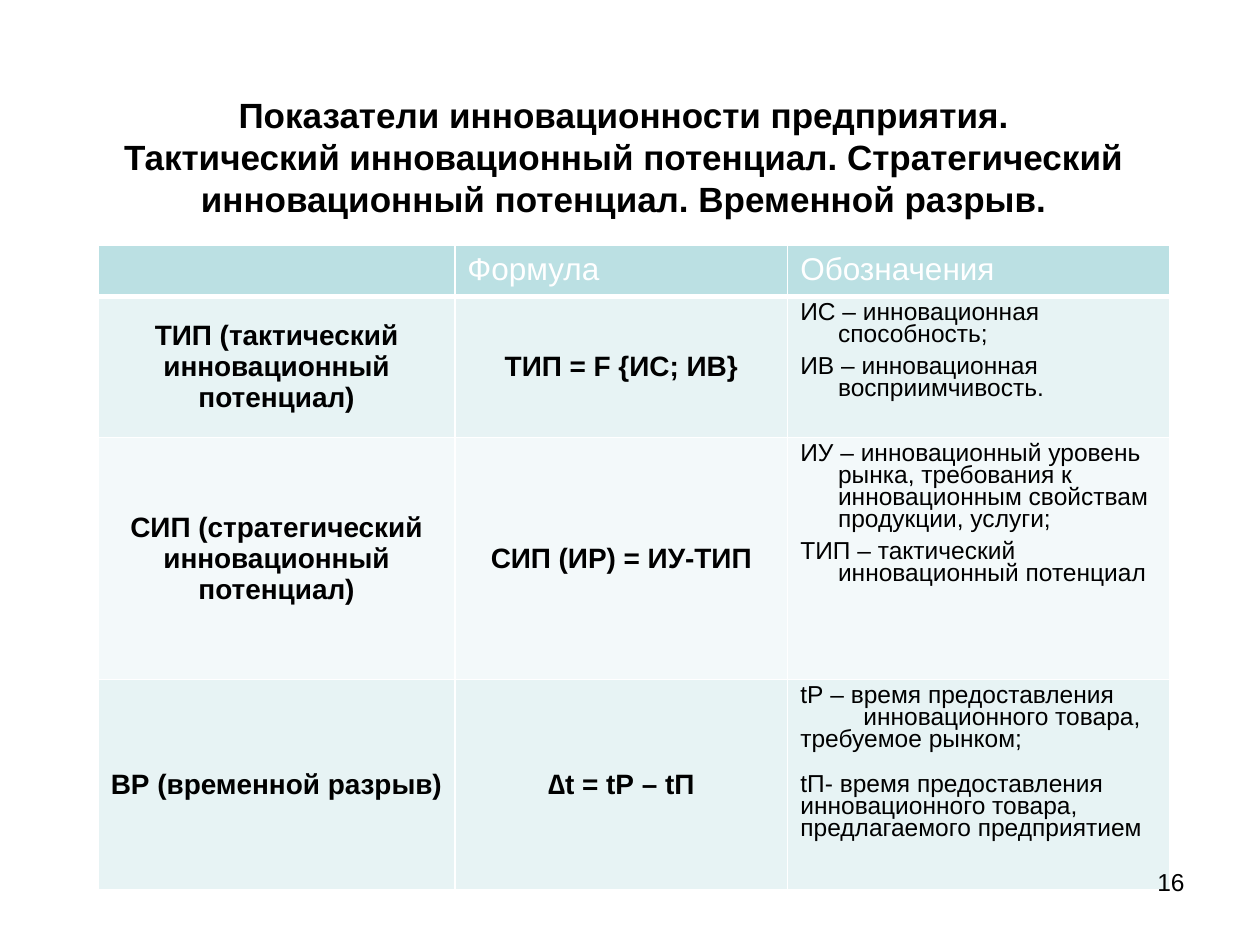
"""Build a slide with a table of enterprise innovation indicators."""
from lxml import etree
from pptx import Presentation
from pptx.dml.color import RGBColor
from pptx.enum.text import MSO_ANCHOR, MSO_AUTO_SIZE, PP_ALIGN
from pptx.oxml.ns import qn
from pptx.util import Cm, Pt

LEFT, CENTER, RIGHT = PP_ALIGN.LEFT, PP_ALIGN.CENTER, PP_ALIGN.RIGHT
TOP, MIDDLE = MSO_ANCHOR.TOP, MSO_ANCHOR.MIDDLE
NO_AUTOFIT = MSO_AUTO_SIZE.NONE
BLACK = RGBColor(0x00, 0x00, 0x00)
WHITE = RGBColor(0xFF, 0xFF, 0xFF)
HEADER = RGBColor(0xBB, 0xE0, 0xE3)
BAND_DARK = RGBColor(0xE7, 0xF3, 0xF4)
BAND_LIGHT = RGBColor(0xF3, 0xF9, 0xFA)


def write(frame, text, size=14, bold=False, color=BLACK, align=LEFT,
          spacing=1.0, gap=0, hanging=0, tab=0):
    for index, line in enumerate(text.split("\n")):
        para = frame.add_paragraph() if index else frame.paragraphs[0]
        para.text = line
        para.alignment = align
        para.line_spacing = spacing
        para.space_before = Pt(gap if index else 0)
        properties = para._p.get_or_add_pPr()
        properties.set("marL", str(Cm(hanging)))
        properties.set("indent", str(-Cm(hanging)))
        if tab:
            tabs = etree.SubElement(properties, qn("a:tabLst"))
            etree.SubElement(tabs, qn("a:tab"), pos=str(Cm(tab)), algn="l")
        for span in para.runs:
            span.font.name = "Arial"
            span.font.size = Pt(size)
            span.font.bold = bold
            span.font.color.rgb = color


def add_borders(cell, widths):
    properties = cell._tc.get_or_add_tcPr()
    for side, width in zip("LRTB", widths):
        line = etree.SubElement(properties, qn(f"a:ln{side}"), w=str(Pt(width)))
        fill = etree.SubElement(line, qn("a:solidFill"))
        etree.SubElement(fill, qn("a:srgbClr"), val=str(WHITE))


deck = Presentation()
deck.slide_width, deck.slide_height = Cm(25.4), Cm(19.05)
page = deck.slides.add_slide(deck.slide_layouts[5])

title = page.shapes.title
title.left, title.top, title.width, title.height = Cm(1.78), Cm(1.78), Cm(21.59), Cm(3.61)
title.text_frame.auto_size = NO_AUTOFIT
title.text_frame.word_wrap = True
title.text_frame.vertical_anchor = MIDDLE
title.text_frame.margin_bottom = Cm(0.97)
write(title.text_frame,
      "Показатели инновационности предприятия.\v"
      "Тактический инновационный потенциал. Стратегический "
      "инновационный потенциал. Временной разрыв.",
      size=20, bold=True, align=CENTER)

indicators = [
    ("", "Формула", "Обозначения"),
    ("ТИП (тактический инновационный потенциал)", "ТИП = F {ИС; ИВ}",
     "ИС – инновационная способность;\nИВ – инновационная восприимчивость."),
    ("СИП (стратегический инновационный потенциал)", "СИП (ИР) = ИУ-ТИП",
     "ИУ – инновационный уровень рынка, требования к инновационным "
     "свойствам продукции, услуги;\nТИП – тактический инновационный потенциал"),
    ("ВР (временной разрыв)", "∆t = tР – tП",
     "tР – время предоставления\v\tинновационного товара, требуемое рынком;\n"
     "tП- время предоставления инновационного товара, предлагаемого предприятием"),
]
row_fills = [HEADER, BAND_DARK, BAND_LIGHT, BAND_DARK]
row_heights = [0.97, 2.84, 4.88, 4.24]
column_widths = [7.19, 6.71, 7.7]
hanging_notes = {"spacing": 0.8, "gap": 5.8, "hanging": 0.76}
time_notes = {"spacing": 0.8, "gap": 13, "tab": 1.1}
note_formats = [None, hanging_notes, hanging_notes, time_notes]

table = page.shapes.add_table(4, 3, Cm(1.98), Cm(4.95),
                              Cm(sum(column_widths)), Cm(sum(row_heights))).table
for column, width in zip(table.columns, column_widths):
    column.width = Cm(width)
for row, height in zip(table.rows, row_heights):
    row.height = Cm(height)

for row_index, texts in enumerate(indicators):
    for column_index, text in enumerate(texts):
        cell = table.cell(row_index, column_index)
        add_borders(cell, (1, 1, 3 if row_index == 1 else 1, 3 if row_index == 0 else 1))
        cell.fill.solid()
        cell.fill.fore_color.rgb = row_fills[row_index]
        if row_index == 0:
            style = {"size": 18, "color": WHITE}
        elif column_index < 2:
            style = {"size": 16, "bold": True, "align": CENTER}
        else:
            style = note_formats[row_index]
        cell.vertical_anchor = MIDDLE if style.get("align") == CENTER else TOP
        write(cell.text_frame, text, **style)

number_box = page.shapes.add_textbox(Cm(18.21), Cm(17.35), Cm(5.92), Cm(1.32))
number_box.text_frame.word_wrap = True
write(number_box.text_frame, "16", align=RIGHT)

deck.save("out.pptx")
